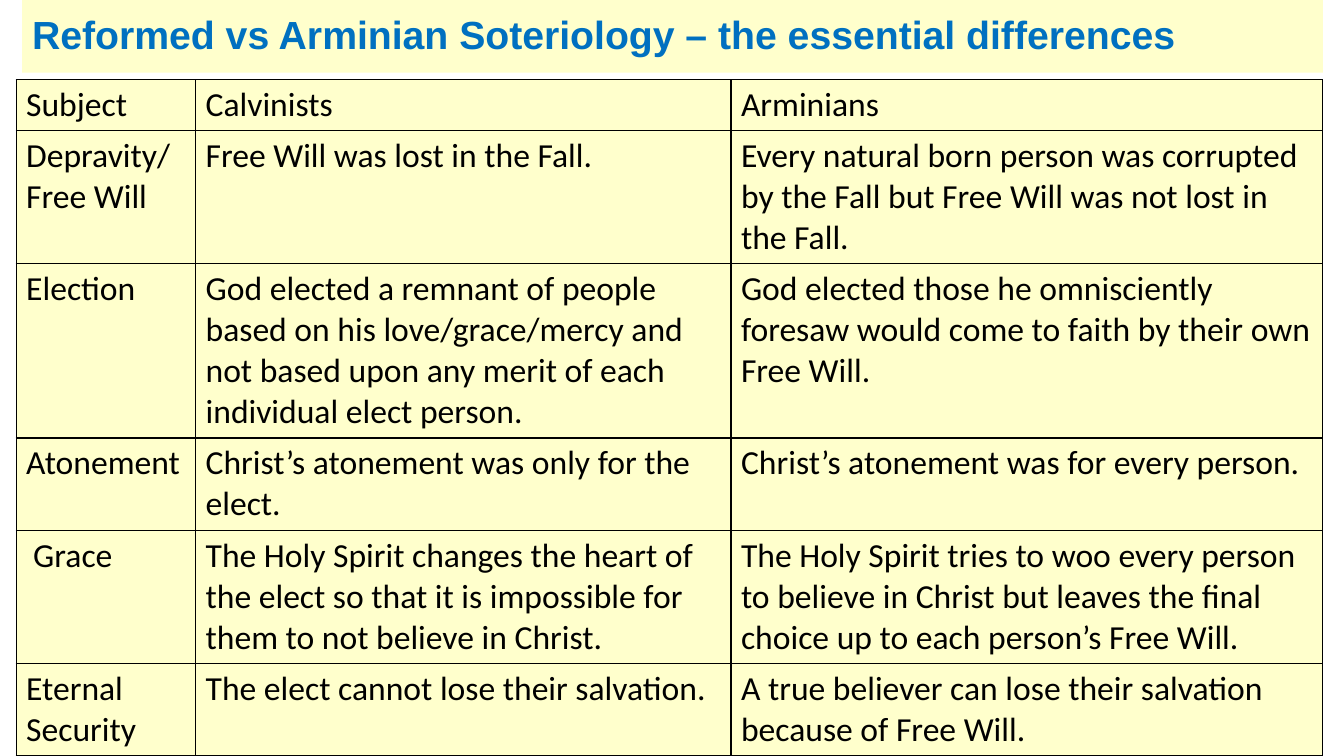
"""Build a slide comparing Reformed and Arminian soteriology in a table."""
import pptx
import pptx.dml.color
import pptx.enum.text
import pptx.oxml
import pptx.oxml.ns
import pptx.util

Inches = pptx.util.Inches
CREAM, BLACK, BLUE = "FFFFCC", "000000", "0070C0"
LINE_HEIGHT, CELL_PADDING = 0.407, 0.1


def color(hex_text):
    return pptx.dml.color.RGBColor.from_string(hex_text)


def write(frame, text, size=24, font="Calibri", ink=BLACK, bold=False, spacing=None):
    frame.word_wrap = True
    for index, line in enumerate(text.split("\n")):
        para = frame.paragraphs[0] if index == 0 else frame.add_paragraph()
        para.line_spacing = spacing
        span = para.add_run()
        span.text = line
        span.font.size = pptx.util.Pt(size)
        span.font.name = font
        span.font.bold = bold
        span.font.color.rgb = color(ink)


deck = pptx.Presentation()
deck.slide_width, deck.slide_height = Inches(13.33), Inches(7.5)
page = deck.slides.add_slide(deck.slide_layouts[6])

title = page.shapes.add_textbox(Inches(0.22), 0, Inches(12.9), Inches(0.72))
title.fill.solid()
title.fill.fore_color.rgb = color(CREAM)
title.text_frame.vertical_anchor = pptx.enum.text.MSO_ANCHOR.MIDDLE
write(title.text_frame, "Reformed vs Arminian Soteriology – the essential differences",
      size=28, font="Arial", ink=BLUE, bold=True, spacing=0.9)

doctrines = [
    (1, "Subject", "Calvinists", "Arminians"),
    (3, "Depravity/\nFree Will", "Free Will was lost in the Fall.",
     "Every natural born person was corrupted by the Fall but Free Will was not lost in the Fall."),
    (4, "Election",
     "God elected a remnant of people based on his love/grace/mercy and not based upon "
     "any merit of each individual elect person.",
     "God elected those he omnisciently foresaw would come to faith by their own Free Will."),
    (2, "Atonement", "Christ’s atonement was only for the elect.",
     "Christ’s atonement was for every person."),
    (3, "Grace",
     "The Holy Spirit changes the heart of the elect so that it is impossible for them "
     "to not believe in Christ.",
     "The Holy Spirit tries to woo every person to believe in Christ but leaves the final "
     "choice up to each person’s Free Will."),
    (2, "Eternal\nSecurity", "The elect cannot lose their salvation.",
     "A true believer can lose their salvation because of Free Will."),
]
column_widths = [1.78, 5.31, 5.87]
row_heights = [CELL_PADDING + LINE_HEIGHT * doctrine[0] for doctrine in doctrines]
table = page.shapes.add_table(
    len(doctrines), len(column_widths), Inches(0.16), Inches(0.79),
    Inches(sum(column_widths)), Inches(sum(row_heights))).table
table.first_row = table.horz_banding = False
for column, width in zip(table.columns, column_widths):
    column.width = Inches(width)

for row, height, (_, *texts) in zip(table.rows, row_heights, doctrines):
    row.height = Inches(height)
    for cell, text in zip(row.cells, texts):
        write(cell.text_frame, text)
        if text == "Grace":
            cell.margin_left = Inches(0.17)
        properties = cell._tc.get_or_add_tcPr()
        for side in ("lnL", "lnR", "lnT", "lnB"):
            properties.append(pptx.oxml.parse_xml(
                f'<a:{side} {pptx.oxml.ns.nsdecls("a")} w="{pptx.util.Pt(1)}">'
                f'<a:solidFill><a:srgbClr val="{BLACK}"/></a:solidFill></a:{side}>'))
        cell.fill.solid()
        cell.fill.fore_color.rgb = color(CREAM)

deck.save("out.pptx")
